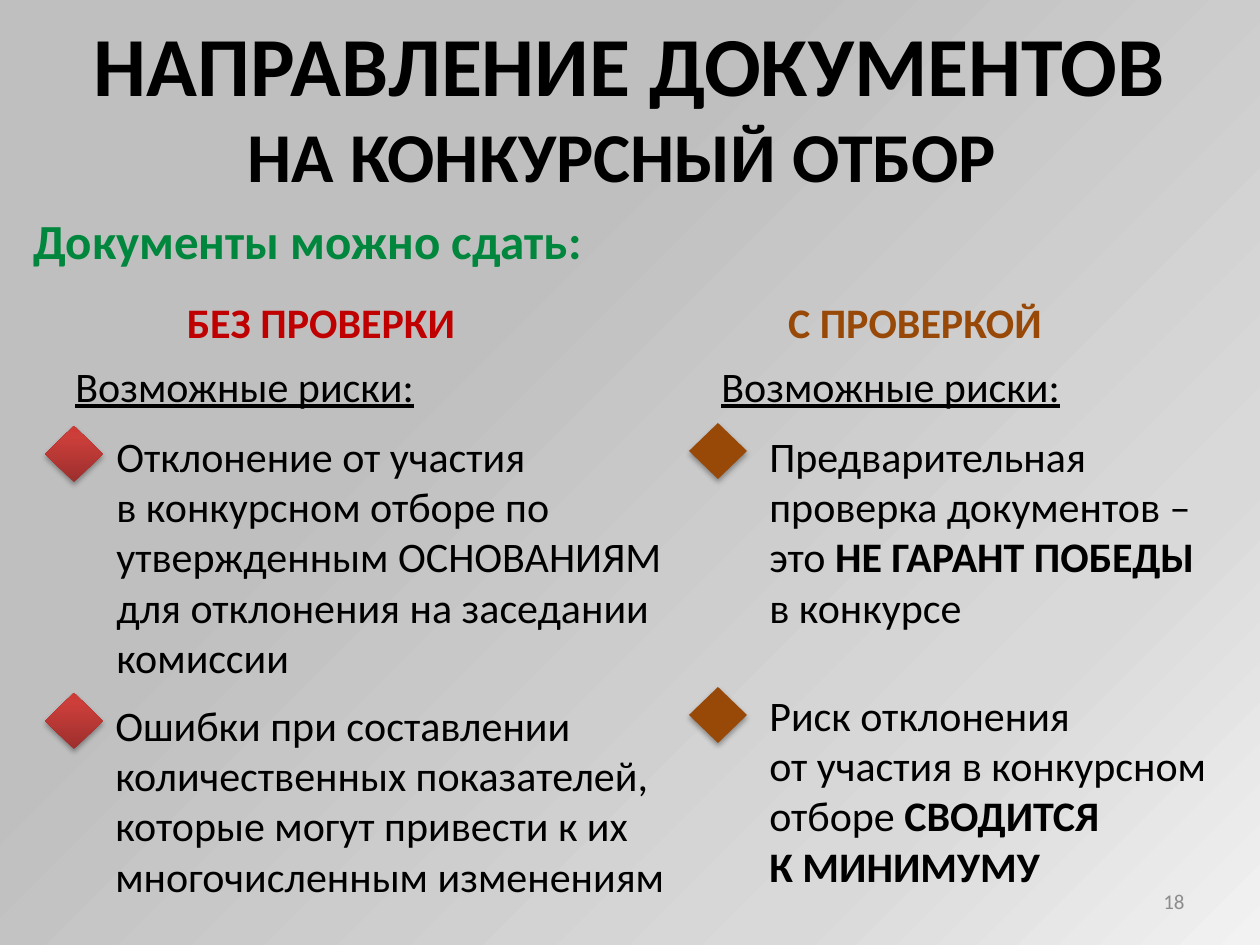
import pptx
import pptx.util
import pptx.dml.color
import pptx.enum.shapes
import pptx.enum.text
import pptx.oxml
import pptx.oxml.ns
from dataclasses import dataclass

SCALE = 914400 / 126  # EMU per px
ALIGN = pptx.enum.text.PP_ALIGN
QN = pptx.oxml.ns.qn
NS = pptx.oxml.ns.nsdecls("a")


@dataclass(frozen=True)
class Theme:
    font: str = "Calibri"
    black: str = "000000"
    red: str = "C00000"
    brown: str = "984807"
    green: str = "00863D"
    grey: str = "8C8C8C"
    back: tuple = ((0, "F2F2F2"), (22, "D9D9D9"), (65, "BFBFBF"))
    ruby: tuple = ((0, "9C2F2D"), (80, "CB3E3A"), (100, "CE3B37"))
    title: int = 48
    sub: int = 40
    lead: int = 28
    body: int = 24
    small: int = 12


THEME = Theme()


def px(*vals):
    return [pptx.util.Emu(round(v * SCALE)) for v in vals]


def rgb(code):
    return pptx.dml.color.RGBColor.from_string(code)


def set_grad(fill, host, stops, shade):
    """Fill with a gradient; shade is the XML of its direction."""
    fill.gradient()
    marks = "".join(
        f'<a:gs pos="{pos * 1000}"><a:srgbClr val="{code}"/></a:gs>'
        for pos, code in stops)
    new = pptx.oxml.parse_xml(
        f'<a:gradFill {NS} rotWithShape="1"><a:gsLst>{marks}</a:gsLst>'
        f'{shade}</a:gradFill>')
    host.replace(host.find(QN("a:gradFill")), new)


def paint_back(slide):
    fill = slide.background.fill
    fill.gradient()
    host = slide.element.find(".//" + QN("p:bgPr"))
    set_grad(fill, host, THEME.back,
             '<a:path path="circle"><a:fillToRect l="100000" t="100000"/>'
             '</a:path>')


def add_text(slide, box, lines, sizes=(THEME.body,), color=THEME.black,
             bold=False, line=False, align=ALIGN.LEFT, wrap=True):
    """Add one paragraph per line; parts between asterisks are bold."""
    frame = slide.shapes.add_textbox(*px(*box)).text_frame
    frame.word_wrap = wrap
    for i, words in enumerate(lines):
        para = frame.paragraphs[0] if i == 0 else frame.add_paragraph()
        para.alignment = align
        font = para.font
        font.name = THEME.font
        font.size = pptx.util.Pt(sizes[min(i, len(sizes) - 1)])
        font.color.rgb = rgb(color)
        font.bold = bold
        font.underline = line
        for j, part in enumerate(words.split("*")):
            if part:
                run = para.add_run()
                run.text = part
                if j % 2:
                    run.font.bold = True
    return frame


def add_gem(slide, left, top, paint):
    """Add a diamond marker; paint is a colour or a list of stops."""
    gem = slide.shapes.add_shape(
        pptx.enum.shapes.MSO_SHAPE.DIAMOND, *px(left, top, 58, 56))
    gem.line.fill.background()
    host = gem.element.spPr
    if isinstance(paint, str):
        gem.fill.solid()
        gem.fill.fore_color.rgb = rgb(paint)
    else:
        set_grad(gem.fill, host, paint, '<a:lin ang="16200000" scaled="0"/>')
    gem.shadow.inherit = False
    host.find(QN("a:effectLst")).append(pptx.oxml.parse_xml(
        f'<a:outerShdw {NS} blurRad="40000" dist="23000" dir="5400000" '
        'rotWithShape="0"><a:srgbClr val="000000"><a:alpha val="35000"/>'
        '</a:srgbClr></a:outerShdw>'))


def add_side(slide, head, color, risk, items, gems, paint):
    """Add a column: heading, underlined label and marked risks."""
    box, words = head
    add_text(slide, box, [words], color=color, bold=True, align=ALIGN.CENTER)
    add_text(slide, risk, ["Возможные риски:"], line=True)
    for place, lines in items:
        add_text(slide, place, lines)
    for left, top in gems:
        add_gem(slide, left, top, paint)


def main():
    deck = pptx.Presentation()
    deck.slide_width, deck.slide_height = px(1260, 945)
    slide = deck.slides.add_slide(deck.slide_layouts[6])
    paint_back(slide)

    add_text(slide, (76, 6, 1108, 199),
             ["НАПРАВЛЕНИЕ ДОКУМЕНТОВ", "НА КОНКУРСНЫЙ ОТБОР "],
             (THEME.title, THEME.sub), bold=True, align=ALIGN.CENTER,
             wrap=False)
    add_text(slide, (21, 204, 736, 72), ["Документы можно сдать:"],
             (THEME.lead,), THEME.green, bold=True)

    add_side(
        slide, ((173, 290, 296, 63), "БЕЗ ПРОВЕРКИ"), THEME.red,
        (63, 354, 605, 63),
        [((104, 424, 605, 267),
          ["Отклонение от участия",
           "в конкурсном отборе по утвержденным ОСНОВАНИЯМ "
           "для отклонения на заседании комиссии"]),
         ((103, 693, 605, 217),
          ["Ошибки при составлении количественных показателей, "
           "которые могут привести к их многочисленным изменениям"])],
        [(45, 426), (45, 693)], THEME.ruby)
    add_side(
        slide, ((738, 290, 354, 63), "С ПРОВЕРКОЙ"), THEME.brown,
        (709, 354, 527, 63),
        [((757, 424, 480, 217),
          ["Предварительная проверка документов –",
           "это *НЕ ГАРАНТ ПОБЕДЫ*", "в конкурсе"]),
         ((757, 683, 480, 217),
          ["Риск отклонения",
           "от участия в конкурсном отборе *СВОДИТСЯ*", "*К МИНИМУМУ*"])],
        [(689, 423), (689, 687)], THEME.brown)

    page = add_text(slide, (903, 876, 294, 50), ["18"], (THEME.small,),
                    THEME.grey, align=ALIGN.RIGHT)
    page.vertical_anchor = pptx.enum.text.MSO_ANCHOR.MIDDLE
    deck.save("out.pptx")


if __name__ == "__main__":
    main()
